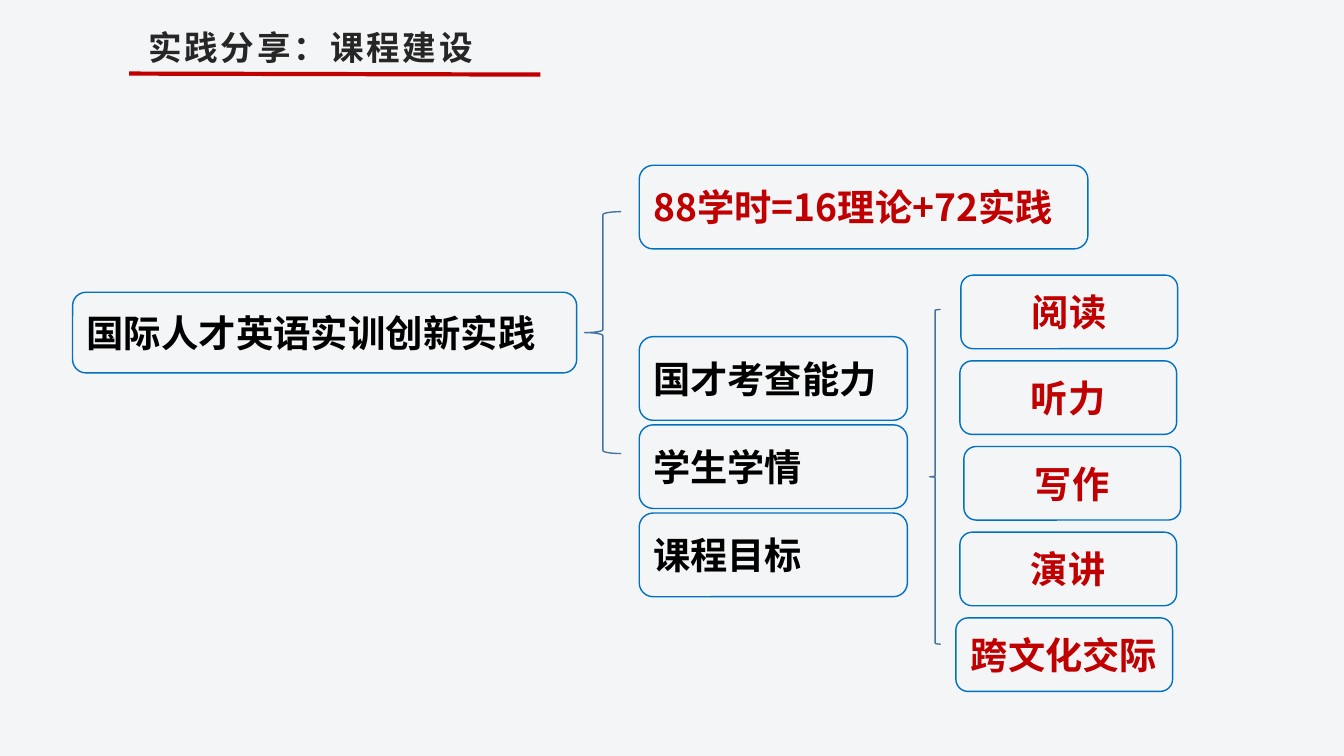
from dataclasses import dataclass

from lxml import etree
from pptx import Presentation
from pptx.dml.color import RGBColor
from pptx.enum.shapes import MSO_CONNECTOR, MSO_SHAPE
from pptx.enum.text import MSO_ANCHOR, PP_ALIGN
from pptx.oxml.ns import qn
from pptx.util import Inches, Pt

ROUNDED = MSO_SHAPE.ROUNDED_RECTANGLE
BRACE = MSO_SHAPE.LEFT_BRACE
STRAIGHT = MSO_CONNECTOR.STRAIGHT
MIDDLE = MSO_ANCHOR.MIDDLE
LEFT = PP_ALIGN.LEFT
CENTER = PP_ALIGN.CENTER


@dataclass(frozen=True)
class Theme:
    background: str = "F4F5F7"
    border: str = "0070C0"
    brace: str = "43739E"
    accent: str = "C00000"
    ink: str = "000000"
    heading: str = "262626"
    body_font: str = "Noto Sans CJK SC"
    heading_font: str = "League Spartan"
    course_size: float = 26.7
    body_size: float = 26.6
    heading_size: float = 24


THEME = Theme()


def color(value):
    return RGBColor.from_string(value)


def write_text(shape, text, size=THEME.body_size, ink=THEME.ink,
               font=THEME.body_font, align=LEFT, spacing=None):
    shape.text_frame.word_wrap = True
    paragraph = shape.text_frame.paragraphs[0]
    paragraph.alignment = align
    run = paragraph.add_run()
    run.text = text
    run.font.size = Pt(size)
    run.font.bold = True
    run.font.name = font
    run.font.color.rgb = color(ink)
    properties = run.font._element
    east_asian = etree.SubElement(properties, qn("a:ea"))
    east_asian.set("typeface", THEME.body_font)
    if spacing:
        properties.set("spc", str(spacing * 100))


def add_outline(slide, preset, left, top, width, height, line_color):
    shape = slide.shapes.add_shape(
        preset, Inches(left), Inches(top), Inches(width), Inches(height))
    shape.shadow.inherit = False
    shape.fill.background()
    shape.line.color.rgb = color(line_color)
    shape.line.width = Pt(1)
    return shape


def add_box(slide, text, left, top, width, height, **text_format):
    box = add_outline(slide, ROUNDED, left, top, width, height, THEME.border)
    box.text_frame.vertical_anchor = MIDDLE
    write_text(box, text, **text_format)


def add_brace(slide, left, top, width, height):
    add_outline(slide, BRACE, left, top, width, height, THEME.brace)


def add_heading(slide, text):
    heading = slide.shapes.add_textbox(
        Inches(1.37), Inches(0.22), Inches(8.66), Inches(0.5))
    write_text(heading, text, size=THEME.heading_size, ink=THEME.heading,
               font=THEME.heading_font, spacing=2)
    underline = slide.shapes.add_connector(
        STRAIGHT, Inches(1.28), Inches(0.73), Inches(5.36), Inches(0.74))
    underline.line.color.rgb = color(THEME.accent)
    underline.line.width = Pt(3)
    etree.SubElement(underline._element.spPr, qn("a:effectLst"))


def main():
    presentation = Presentation()
    presentation.slide_width = Inches(13.33)
    presentation.slide_height = Inches(7.5)
    slide = presentation.slides.add_slide(presentation.slide_layouts[6])
    slide.background.fill.solid()
    slide.background.fill.fore_color.rgb = color(THEME.background)

    add_box(slide, "国际人才英语实训创新实践", 0.72, 2.9, 5, 0.8,
            size=THEME.course_size)
    add_brace(slide, 5.8, 2.1, 0.36, 2.4)
    add_box(slide, "88学时=16理论+72实践", 6.34, 1.64, 4.45, 0.83,
            ink=THEME.accent)

    for index, basis in enumerate(["国才考查能力", "学生学情", "课程目标"]):
        add_box(slide, basis, 6.34, 3.34 + 0.875 * index, 2.66, 0.83)

    add_brace(slide, 9.22, 3.07, 0.11, 3.32)
    skills = [("阅读", 9.53), ("听力", 9.52), ("写作", 9.56),
              ("演讲", 9.52), ("跨文化交际", 9.48)]
    for index, (skill, left) in enumerate(skills):
        add_box(slide, skill, left, 2.73 + 0.85 * index, 2.15, 0.73,
                ink=THEME.accent, align=CENTER)

    add_heading(slide, "实践分享：课程建设")
    presentation.save("out.pptx")


if __name__ == "__main__":
    main()
